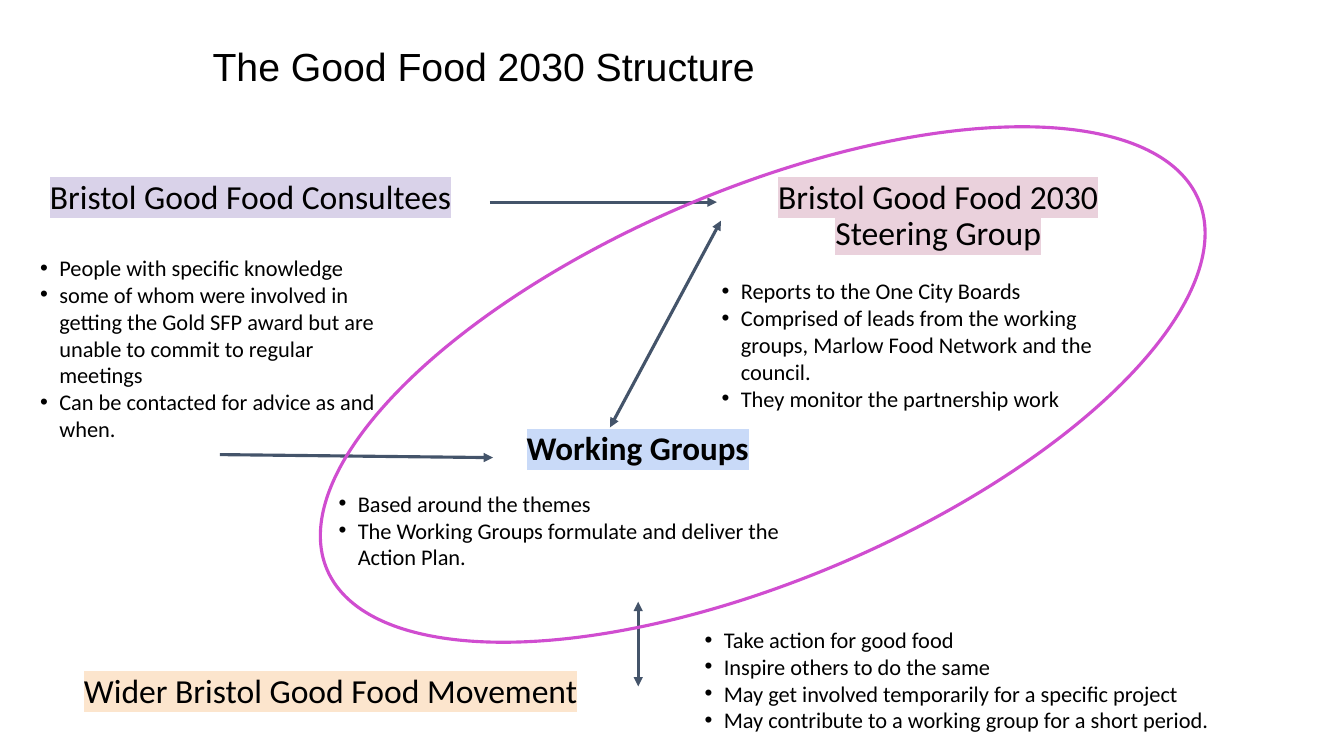
import pptx
import pptx.util
import pptx.dml.color
import pptx.enum.shapes
import pptx.enum.text
import pptx.oxml.ns
from lxml import etree

Inches = pptx.util.Inches
Pt = pptx.util.Pt
RGB = pptx.dml.color.RGBColor.from_string
qn = pptx.oxml.ns.qn

theme = {
    "text": "000000", "line": "44546A", "ring": "D04DD0", "back": "FFFFFF",
    "lilac": "D9D2E9", "pink": "EAD1DC", "blue": "C9DAF8", "peach": "FCE5CD",
    "title": 28, "head": 24, "group": 23.6, "body": 16, "width": 2.25,
    "sans": "Arial", "font": "Calibri",
}

deck = pptx.Presentation()
deck.slide_width = Inches(13.33)
deck.slide_height = Inches(7.5)
slide = deck.slides.add_slide(deck.slide_layouts[6])


def add_box(area):
    box = slide.shapes.add_textbox(*map(Inches, area))
    frame = box.text_frame
    frame.word_wrap = True
    frame.margin_left = frame.margin_right = Inches(0.1)
    frame.margin_top = frame.margin_bottom = Inches(0.1)
    return box


def add_run(para, text, size, font, bold=False, mark=None):
    run = para.add_run()
    run.text = text
    run.font.size = Pt(size)
    run.font.bold = bold
    run.font.color.rgb = RGB(theme["text"])
    if mark:
        light = etree.SubElement(run.font._element, qn("a:highlight"))
        etree.SubElement(light, qn("a:srgbClr"), val=mark)
    run.font.name = font


title = add_box((2.01, 0.37, 9.32, 0.63))
para = title.text_frame.paragraphs[0]
para.line_spacing = 0.9
add_run(para, "The Good Food 2030 Structure", theme["title"], theme["sans"])

lists = [
    ((0.3, 2.42, 3.75, 2.09), [
        "People with specific knowledge",
        "some of whom were involved in getting the Gold SFP award but are unable to commit to regular meetings",
        "Can be contacted for advice as and when."]),
    ((3.26, 4.76, 5.05, 1.01), [
        "Based around the themes",
        "The Working Groups formulate and deliver the Action Plan."]),
    ((6.89, 6.11, 5.75, 1.28), [
        "Take action for good food",
        "Inspire others to do the same",
        "May get involved temporarily for a specific project",
        "May contribute to a working group for a short period."]),
    ((7.06, 2.65, 4.27, 1.55), [
        "Reports to the One City Boards",
        "Comprised of leads from the working groups, Marlow Food Network and the council.",
        "They monitor the partnership work"]),
]
for area, items in lists:
    box = add_box(area)
    box.fill.solid()
    box.fill.fore_color.rgb = RGB(theme["back"])
    frame = box.text_frame
    for index, item in enumerate(items):
        para = frame.add_paragraph() if index else frame.paragraphs[0]
        props = para._p.get_or_add_pPr()
        props.set("marL", str(Inches(0.19)))
        props.set("indent", str(-Inches(0.19)))
        etree.SubElement(props, qn("a:buFont"), typeface=theme["sans"])
        etree.SubElement(props, qn("a:buChar"), char="•")
        add_run(para, item, theme["body"], theme["font"])

heads = [
    ("Bristol Good Food Consultees", (0.11, 1.69, 4.75, 0.63), "lilac", "head", False),
    ("Bristol Good Food 2030 Steering Group", (7.11, 1.69, 4.39, 0.63), "pink", "head", False),
    ("Working Groups", (4.35, 4.19, 3.95, 0.63), "blue", "group", True),
    ("Wider Bristol Good Food Movement", (0.3, 6.59, 5.96, 0.91), "peach", "head", False),
]
boxes = []
for text, area, mark, size, bold in heads:
    box = add_box(area)
    para = box.text_frame.paragraphs[0]
    para.alignment = pptx.enum.text.PP_ALIGN.CENTER
    para.line_spacing = 0.9
    para.space_after = Pt(12)
    add_run(para, text, theme[size], theme["font"], bold, theme[mark])
    boxes.append(box)

arrows = [
    ((4.86, 2), (7.11, 2), False),
    ((6.05, 4.24), (7.15, 2.19), True),
    ((2.18, 4.51), (4.89, 4.54), False),
    ((6.33, 6.81), (6.33, 5.97), True),
]
links = []
for start, end, both in arrows:
    link = slide.shapes.add_connector(
        pptx.enum.shapes.MSO_CONNECTOR.STRAIGHT, *map(Inches, start + end))
    link.line.color.rgb = RGB(theme["line"])
    link.line.width = Pt(theme["width"])
    line = link.line._get_or_add_ln()
    for tag in ("a:headEnd", "a:tailEnd") if both else ("a:tailEnd",):
        etree.SubElement(line, qn(tag), type="triangle")
    etree.SubElement(link._element.spPr, qn("a:effectLst"))
    links.append(link)
links[0].begin_connect(boxes[0], 3)
links[0].end_connect(boxes[1], 1)

ring = slide.shapes.add_shape(
    pptx.enum.shapes.MSO_SHAPE.OVAL, *map(Inches, (2.87, 1.88, 9.39, 3.87)))
ring.rotation = 337
ring.shadow.inherit = False
ring.fill.background()
ring.line.color.rgb = RGB(theme["ring"])
ring.line.width = Pt(theme["width"])

deck.save("out.pptx")
